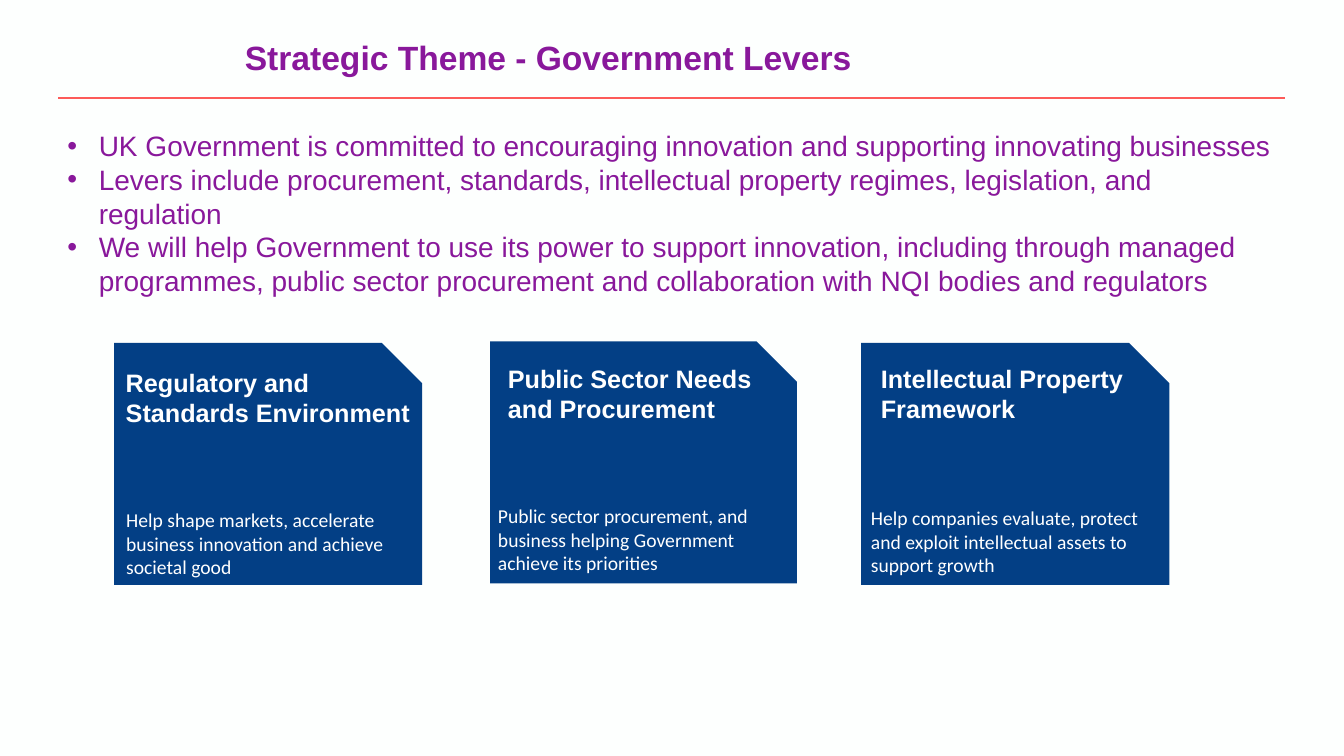
from dataclasses import dataclass

from lxml import etree
from pptx import Presentation
from pptx.dml.color import RGBColor
from pptx.enum import shapes, text
from pptx.oxml import ns
from pptx.util import Cm, Pt

COLORS = {
    "background": "FDFFFE",
    "purple": "89189B",
    "rule": "FD5B59",
    "card": "033F85",
    "white": "FFFFFF",
}
CARD_HEIGHT = 6.1
HEADING_HEIGHT = 1.8
DETAIL_HEIGHT = 2.06
BULLET_INDENT = 0.79


@dataclass
class Box:
    """A place on the slide, in centimetres."""
    left: float
    top: float
    width: float
    height: float

    def lengths(self):
        return Cm(self.left), Cm(self.top), Cm(self.width), Cm(self.height)


@dataclass
class Card:
    panel: Box
    heading: str
    heading_box: Box
    detail: str
    detail_box: Box


CARDS = [
    Card(Box(2.88, 8.64, 7.76, CARD_HEIGHT),
         "Regulatory and Standards Environment",
         Box(2.92, 9.12, 7.74, HEADING_HEIGHT),
         "Help shape markets, accelerate business innovation and achieve societal good",
         Box(2.93, 12.68, 7.56, DETAIL_HEIGHT)),
    Card(Box(12.35, 8.6, 7.73, CARD_HEIGHT),
         "Public Sector Needs and Procurement",
         Box(12.55, 9.02, 7.5, HEADING_HEIGHT),
         "Public sector procurement, and business helping Government achieve its priorities",
         Box(12.3, 12.58, 7.73, DETAIL_HEIGHT)),
    Card(Box(21.7, 8.64, 7.77, CARD_HEIGHT),
         "Intellectual Property Framework",
         Box(21.95, 9.02, 7.54, HEADING_HEIGHT),
         "Help companies evaluate, protect and exploit intellectual assets to support growth",
         Box(21.7, 12.63, 7.73, DETAIL_HEIGHT)),
]

COMMITMENTS = [
    "UK Government is committed to encouraging innovation and supporting innovating businesses",
    "Levers include procurement, standards, intellectual property regimes, legislation, and regulation",
    "We will help Government to use its power to support innovation, including through managed "
    "programmes, public sector procurement and collaboration with NQI bodies and regulators",
]


def rgb(name: str) -> RGBColor:
    return RGBColor.from_string(COLORS[name])


def add_bullet(p) -> None:
    pPr = p._p.get_or_add_pPr()
    pPr.set("marL", str(Cm(BULLET_INDENT)))
    pPr.set("indent", str(-Cm(BULLET_INDENT)))
    etree.SubElement(pPr, ns.qn("a:buFont"), typeface="Arial")
    etree.SubElement(pPr, ns.qn("a:buChar"), char="•")


def add_text(parent, box: Box, lines: list[str], *, size: float, color: str = "white",
             font: str = "Arial", bold: bool = False, bullets: bool = False,
             spacing: float | None = None, margin: float | None = None) -> None:
    """Add a wrapped text box with one paragraph for each line."""
    tf = parent.add_textbox(*box.lengths()).text_frame
    tf.word_wrap = True
    tf.vertical_anchor = text.MSO_ANCHOR.TOP
    if margin is not None:
        tf.margin_left = tf.margin_right = tf.margin_top = tf.margin_bottom = Cm(margin)
    for i, line in enumerate(lines):
        p = tf.add_paragraph() if i else tf.paragraphs[0]
        if spacing:
            p.line_spacing = spacing
        if bullets:
            add_bullet(p)
        r = p.add_run()
        r.text = line
        r.font.name = font
        r.font.size = Pt(size)
        r.font.bold = bold
        r.font.color.rgb = rgb(color)


def add_rule(slide, left: float, right: float, y: float) -> None:
    line = slide.shapes.add_connector(
        shapes.MSO_CONNECTOR.STRAIGHT, Cm(left), Cm(y), Cm(right), Cm(y))
    line.line.color.rgb = rgb("rule")
    line.line.width = Pt(1.5)
    etree.SubElement(line._element.spPr, ns.qn("a:effectLst"))


def add_card(slide, card: Card) -> None:
    group = slide.shapes.add_group_shape().shapes
    sp = group.add_shape(shapes.MSO_SHAPE.SNIP_ROUND_RECTANGLE, *card.panel.lengths())
    sp.adjustments[0] = 0
    sp.adjustments[1] = 0.167
    sp.shadow.inherit = False
    sp.fill.solid()
    sp.fill.fore_color.rgb = rgb("card")
    sp.line.fill.background()
    add_text(group, card.heading_box, [card.heading], size=18, bold=True)
    add_text(group, card.detail_box, [card.detail], size=14, font="Calibri")


def main() -> None:
    prs = Presentation()
    prs.slide_width, prs.slide_height = Cm(33.87), Cm(19.05)
    slide = prs.slides.add_slide(prs.slide_layouts[6])
    slide.background.fill.solid()
    slide.background.fill.fore_color.rgb = rgb("background")

    add_rule(slide, 1.47, 32.39, 2.47)
    add_text(slide.shapes, Box(1.7, 3.25, 30.48, 12.88), COMMITMENTS,
             size=20, color="purple", bullets=True, margin=0)
    add_text(slide.shapes, Box(5.92, 0.91, 22.76, 1.96),
             ["Strategic Theme - Government Levers"],
             size=24, color="purple", bold=True, spacing=0.9)
    for card in CARDS:
        add_card(slide, card)
    prs.save("out.pptx")


if __name__ == "__main__":
    main()
